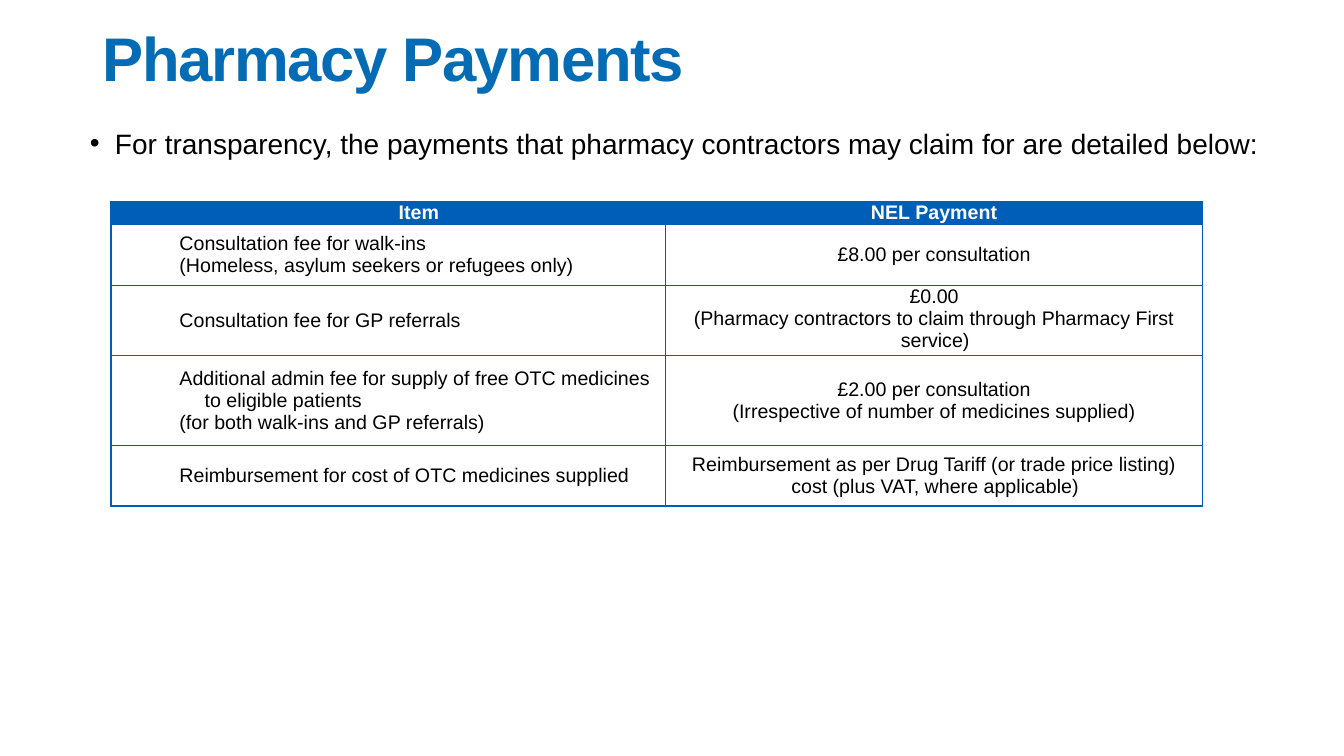
from lxml import etree
from pptx import Presentation
from pptx.dml.color import RGBColor
from pptx.enum import text
from pptx.oxml import ns
from pptx.util import Inches, Pt

TITLE_BLUE = RGBColor(0x04, 0x6C, 0xB4)
TABLE_BLUE = RGBColor(0x00, 0x5E, 0xB8)
WHITE = RGBColor(0xFF, 0xFF, 0xFF)
BLACK = RGBColor(0x00, 0x00, 0x00)


def place(holder, left, top, width, height):
    holder.left, holder.top = Inches(left), Inches(top)
    holder.width, holder.height = Inches(width), Inches(height)
    holder.text_frame.auto_size = text.MSO_AUTO_SIZE.NONE


def write(paragraph, wording, color, left, hanging, **font_format):
    """Add one run and set the paragraph's hanging indent."""
    properties = paragraph._p.get_or_add_pPr()
    properties.set("marL", str(Inches(left)))
    properties.set("indent", str(Inches(hanging)))
    run = paragraph.add_run()
    run.text = wording
    run.font.color.rgb = color
    for name, value in {"name": "Arial", **font_format}.items():
        setattr(run.font, name, value)
    return run


deck = Presentation()
deck.slide_width, deck.slide_height = Inches(13.33), Inches(7.5)
slide = deck.slides.add_slide(deck.slide_layouts[1])

# Title
title = slide.shapes.title
place(title, 0.92, 0.15, 11.5, 0.93)
title.text_frame.vertical_anchor = text.MSO_ANCHOR.MIDDLE
heading = title.text_frame.paragraphs[0]
heading.alignment = text.PP_ALIGN.LEFT
heading.line_spacing = 0.9
heading_run = write(heading, "Pharmacy Payments", TITLE_BLUE, 0, 0, size=Pt(44), bold=True)
heading_run.font._element.set("spc", "-100")

# Introductory bullet
intro = slide.placeholders[1]
place(intro, 0.79, 1.2, 12.32, 5.26)
intro_line = intro.text_frame.paragraphs[0]
bullet = etree.SubElement(intro_line._p.get_or_add_pPr(), ns.qn("a:buChar"))
bullet.set("char", "•")
intro_line.space_before, intro_line.space_after = Pt(0), Pt(6)
write(intro_line, "For transparency, the payments that pharmacy contractors may claim for are detailed below:",
      BLACK, 0.25, -0.25, size=Pt(20))

# Payment table: each cell is a list of paragraphs
payments = [
    (["Item"], ["NEL Payment"]),
    (["Consultation fee for walk-ins", "(Homeless, asylum seekers or refugees only)"],
     ["£8.00 per consultation"]),
    (["Consultation fee for GP referrals"],
     ["£0.00", "(Pharmacy contractors to claim through Pharmacy First service)"]),
    (["Additional admin fee for supply of free OTC medicines to eligible patients",
      "(for both walk-ins and GP referrals)"],
     ["£2.00 per consultation", "(Irrespective of number of medicines supplied)"]),
    (["Reimbursement for cost of OTC medicines supplied"],
     ["Reimbursement as per Drug Tariff (or trade price listing) cost (plus VAT, where applicable)"]),
]
column_widths = [5.5, 5.33]
row_heights = [0.23, 0.6, 0.7, 0.89, 0.6]
text_indents = [0.86, 0.02]
top_anchored = {(0, 0), (0, 1), (2, 1)}

table = slide.shapes.add_table(len(row_heights), len(column_widths), Inches(1.1), Inches(2),
                               Inches(sum(column_widths)), Inches(sum(row_heights))).table
table.horz_banding = False
for column, width in zip(table.columns, column_widths):
    column.width = Inches(width)
for row, height in zip(table.rows, row_heights):
    row.height = Inches(height)

for r, payment in enumerate(payments):
    header = r == 0
    for c, lines in enumerate(payment):
        cell = table.cell(r, c)
        cell.margin_left = cell.margin_right = Inches(0.07)
        cell.margin_top = cell.margin_bottom = 0
        cell.vertical_anchor = text.MSO_ANCHOR.TOP if (r, c) in top_anchored else text.MSO_ANCHOR.MIDDLE
        if header:
            cell.fill.solid()
            cell.fill.fore_color.rgb = TABLE_BLUE
        else:
            cell.fill.background()

        # Borders come before the fill in the cell properties
        cell_properties = cell._tc.get_or_add_tcPr()
        for position, side in enumerate(("a:lnL", "a:lnR", "a:lnT", "a:lnB")):
            border = etree.Element(ns.qn(side), w=str(Pt(1)))
            border_fill = etree.SubElement(border, ns.qn("a:solidFill"))
            etree.SubElement(border_fill, ns.qn("a:srgbClr"), val=str(TABLE_BLUE))
            cell_properties.insert(position, border)

        for i, line in enumerate(lines):
            paragraph = cell.text_frame.paragraphs[0] if i == 0 else cell.text_frame.add_paragraph()
            centred = header or c == 1
            paragraph.alignment = text.PP_ALIGN.CENTER if centred else text.PP_ALIGN.LEFT
            write(paragraph, line, WHITE if header else BLACK, text_indents[c], -0.25,
                  size=Pt(14), bold=header)

deck.save("out.pptx")
